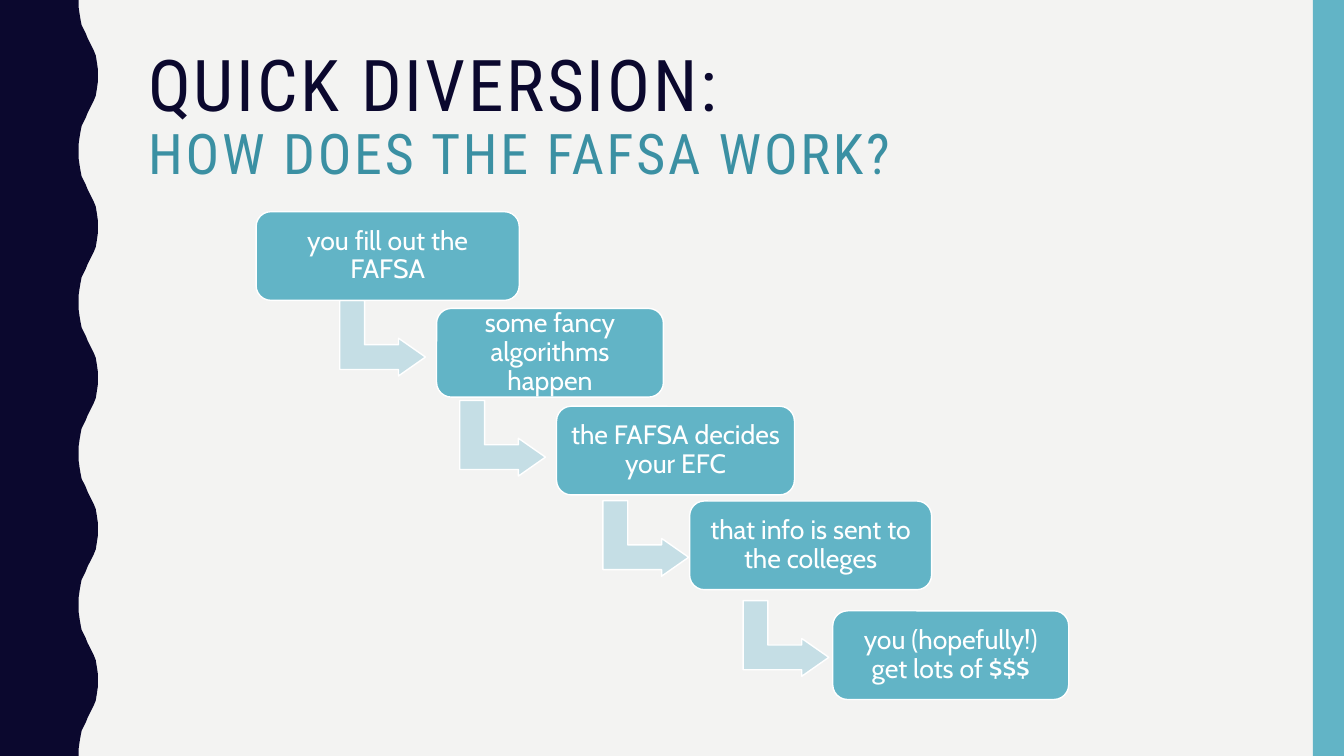
from pptx import Presentation
from pptx.dml.color import RGBColor
from pptx.enum.shapes import MSO_SHAPE
from pptx.enum.text import MSO_ANCHOR, MSO_AUTO_SIZE, PP_ALIGN
from pptx.util import Inches, Pt

RECTANGLE = MSO_SHAPE.RECTANGLE
ROUNDED_RECTANGLE = MSO_SHAPE.ROUNDED_RECTANGLE
BENT_ARROW = MSO_SHAPE.BENT_UP_ARROW
TOP, MIDDLE = MSO_ANCHOR.TOP, MSO_ANCHOR.MIDDLE
LEFT, CENTER = PP_ALIGN.LEFT, PP_ALIGN.CENTER
NO_AUTOFIT = MSO_AUTO_SIZE.NONE

NAVY = RGBColor(0x0B, 0x08, 0x2E)
TEAL = RGBColor(0x62, 0xB4, 0xC6)
DARK_TEAL = RGBColor(0x3B, 0x90, 0xA3)
PALE_TEAL = RGBColor(0xC5, 0xDE, 0xE5)
OFF_WHITE = RGBColor(0xF3, 0xF3, 0xF2)
WHITE = RGBColor(0xFF, 0xFF, 0xFF)

SLIDE_WIDTH, SLIDE_HEIGHT = 13.33, 7.5
WAVE_PERIOD = 1.5
HALF_WAVE = [
    (0.78, 0), (0.78, 0.07), (0.79, 0.14), (0.8, 0.2), (0.81, 0.25),
    (0.83, 0.29), (0.85, 0.33), (0.87, 0.38), (0.89, 0.42), (0.91, 0.46),
    (0.93, 0.5), (0.95, 0.55), (0.96, 0.61), (0.97, 0.68), (0.97, 0.75),
]
STEPS = [
    ("you fill out the FAFSA", 2.54, 2.1, 2.61),
    ("some fancy algorithms happen", 4.33, 3.06, 2.25),
    ("the FAFSA decides your EFC", 5.52, 4.03, 2.36),
    ("that info is sent to the colleges", 6.84, 4.97, 2.4),
    ("you (hopefully!) get lots of $$$", 8.26, 6.06, 2.34),
]
STEP_HEIGHT = 0.88
ARROW_LEFTS = [3.42, 4.61, 6.03, 7.42]
ARROW_TOP, ARROW_PITCH = 2.93, 0.993


class StepSlide:
    """Draws the elements of a staircase process in one shared style."""

    title_font = "Roboto Condensed"
    body_font = "Cabin"

    def __init__(self, presentation):
        self.slide = presentation.slides.add_slide(presentation.slide_layouts[5])
        self.slide.background.fill.solid()
        self.slide.background.fill.fore_color.rgb = OFF_WHITE

    def paint(self, shape, fill, line=None):
        shape.shadow.inherit = False
        shape.fill.solid()
        shape.fill.fore_color.rgb = fill
        if line is None:
            shape.line.fill.background()
        else:
            shape.line.color.rgb = line
            shape.line.width = Pt(1)

    def add_run(self, paragraph, text, font, size, color):
        run = paragraph.add_run()
        run.text = text
        run.font.name = font
        run.font.size = Pt(size)
        run.font.color.rgb = color
        return run

    def add_shape(self, kind, left, top, width, height, fill, line=None):
        shape = self.slide.shapes.add_shape(
            kind, Inches(left), Inches(top), Inches(width), Inches(height))
        self.paint(shape, fill, line)
        return shape

    def add_wave(self):
        crest = [(x, WAVE_PERIOD - y) for x, y in reversed(HALF_WAVE[:-1])]
        edge = [(x, y + number * WAVE_PERIOD)
                for number in range(round(SLIDE_HEIGHT / WAVE_PERIOD))
                for x, y in HALF_WAVE + crest]
        builder = self.slide.shapes.build_freeform(0, 0)
        builder.add_line_segments(
            [(Inches(x), Inches(y)) for x, y in edge + [(0, SLIDE_HEIGHT)]],
            close=True)
        self.paint(builder.convert_to_shape(), NAVY)

    def add_title(self, lines):
        title = self.slide.shapes.title
        title.left, title.top = Inches(1.37), Inches(0.42)
        title.width, title.height = Inches(11.13), Inches(1.63)
        frame = title.text_frame
        frame.word_wrap = True
        frame.auto_size = NO_AUTOFIT
        frame.vertical_anchor = TOP
        frame.margin_top = Inches(0.07)
        paragraph = frame.paragraphs[0]
        paragraph.alignment = LEFT
        paragraph.line_spacing = 0.9
        for number, (text, size, color) in enumerate(lines):
            if number:
                paragraph.add_line_break()
            run = self.add_run(paragraph, text, self.title_font, size, color)
            run.font._element.set("spc", "200")

    def add_arrow(self, left, top):
        arrow = self.add_shape(BENT_ARROW, left, top, 0.75, 0.85, PALE_TEAL, WHITE)
        arrow.rotation = 90
        for number, value in enumerate((0.328, 0.25, 0.358)):
            arrow.adjustments[number] = value

    def add_step(self, text, left, top, width):
        box = self.add_shape(
            ROUNDED_RECTANGLE, left, top, width, STEP_HEIGHT, TEAL, WHITE)
        frame = box.text_frame
        frame.word_wrap = True
        frame.vertical_anchor = MIDDLE
        frame.margin_left = frame.margin_right = Inches(0.08)
        frame.margin_top = frame.margin_bottom = Inches(0.08)
        paragraph = frame.paragraphs[0]
        paragraph.alignment = CENTER
        paragraph.line_spacing = 0.9
        self.add_run(paragraph, text, self.body_font, 19, WHITE)


def main():
    presentation = Presentation()
    presentation.slide_width = Inches(SLIDE_WIDTH)
    presentation.slide_height = Inches(SLIDE_HEIGHT)
    page = StepSlide(presentation)
    page.add_wave()
    page.add_shape(RECTANGLE, 13.02, 0, 0.31, SLIDE_HEIGHT, TEAL)
    page.add_title([
        ("QUICK DIVERSION:", 51, NAVY),
        ("HOW DOES THE FAFSA WORK?", 40, DARK_TEAL),
    ])
    for number, left in enumerate(ARROW_LEFTS):
        page.add_arrow(left, ARROW_TOP + number * ARROW_PITCH)
    for step in STEPS:
        page.add_step(*step)
    presentation.save("out.pptx")


if __name__ == "__main__":
    main()
